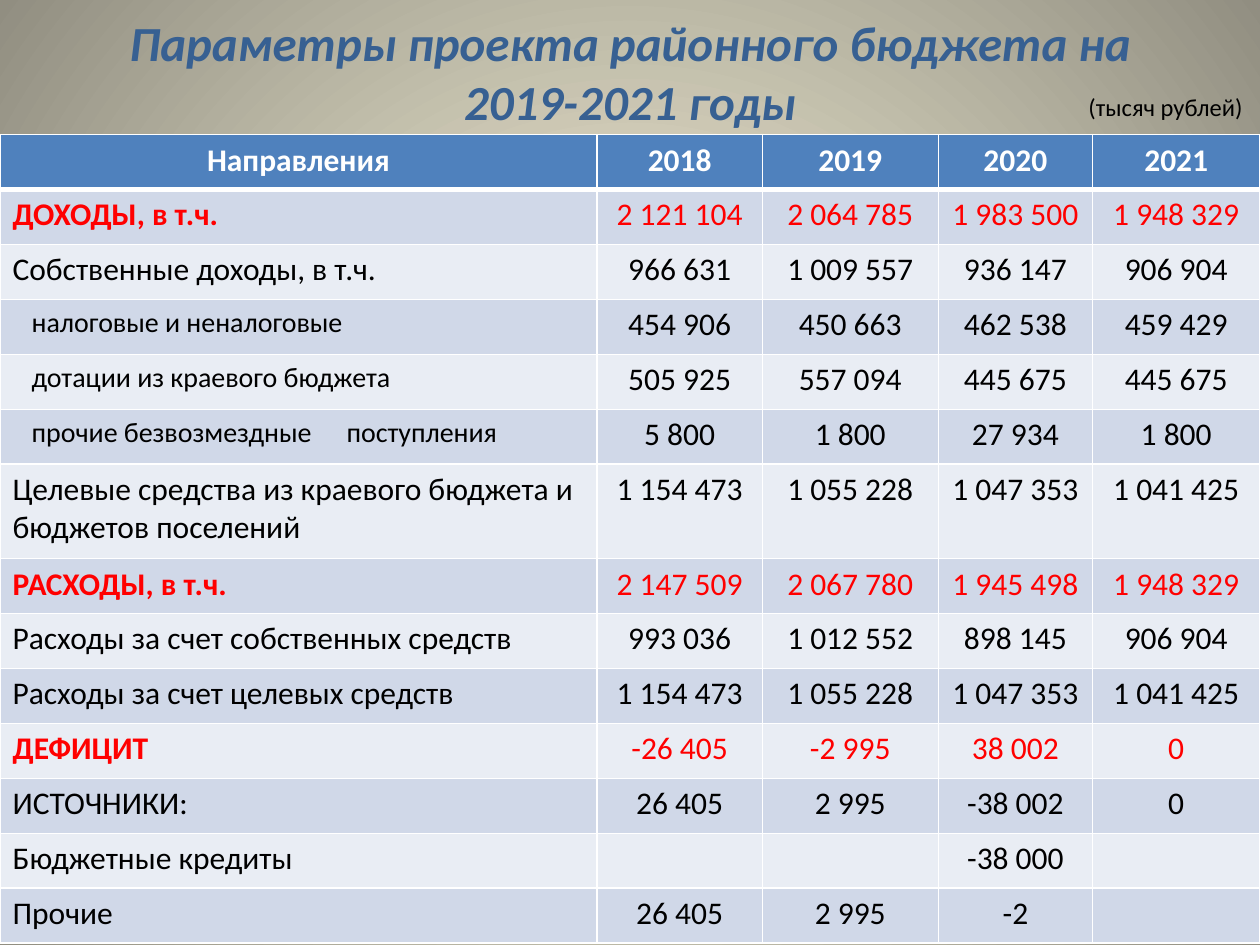
from lxml.etree import SubElement
from pptx import Presentation
from pptx.dml.color import RGBColor as RGB
from pptx.enum.text import MSO_ANCHOR as Anchor, MSO_AUTO_SIZE as Auto, PP_ALIGN as Align
from pptx.oxml.ns import qn
from pptx.util import Pt

BLUE, RED, BLACK, WHITE = "4F81BD", "FF0000", "000000", "FFFFFF"
BANDS = "D0D8E8", "E9EDF4"
COLS = 341.2, 94.4, 100.6, 88.2, 95.6
ROW, TALL = 31.4, 54
HEAD = "Направления", "2018", "2019", "2020", "2021"
TOTAL, ITEM, SUB = "total", "item", "sub"
ROWS = [
    (TOTAL, "ДОХОДЫ, в т.ч.", "2 121 104", "2 064 785", "1 983 500", "1 948 329"),
    (ITEM, "Собственные доходы, в т.ч.", "966 631", "1 009 557", "936 147", "906 904"),
    (SUB, "налоговые и неналоговые", "454 906", "450 663", "462 538", "459 429"),
    (SUB, "дотации из краевого бюджета", "505 925", "557 094", "445 675", "445 675"),
    (SUB, "прочие безвозмездные\tпоступления", "5 800", "1 800", "27 934", "1 800"),
    (ITEM, "Целевые средства из краевого бюджета и бюджетов поселений",
     "1 154 473", "1 055 228", "1 047 353", "1 041 425"),
    (TOTAL, "РАСХОДЫ, в т.ч.", "2 147 509", "2 067 780", "1 945 498", "1 948 329"),
    (ITEM, "Расходы за счет собственных средств", "993 036", "1 012 552", "898 145", "906 904"),
    (ITEM, "Расходы за счет целевых средств",
     "1 154 473", "1 055 228", "1 047 353", "1 041 425"),
    (TOTAL, "ДЕФИЦИТ", "-26 405", "-2 995", "38 002", "0"),
    (ITEM, "ИСТОЧНИКИ:", "26 405", "2 995", "-38 002", "0"),
    (ITEM, "Бюджетные кредиты", "", "", "-38 000", ""),
    (ITEM, "Прочие", "26 405", "2 995", "-2", ""),
]
TALL_ROW = 6


def color(code):
    return RGB.from_string(code)


def write(frame, text, size=18, ink=BLACK, bold=False, italic=False, align=Align.LEFT):
    para = frame.paragraphs[0]
    para.alignment = align
    if text:
        run = para.add_run()
        run.text = text
        font = run.font
        font.name, font.size = "Calibri", Pt(size)
        font.bold, font.italic = bold, italic
        font.color.rgb = color(ink)
    return para


def place(shape, left, top, width, height):
    shape.left, shape.top = Pt(left), Pt(top)
    shape.width, shape.height = Pt(width), Pt(height)


def paint(slide):
    """Fill the background with a radial gradient."""
    fill = slide.background.fill
    fill.gradient()
    for stop, pos, code in zip(fill.gradient_stops, (0, 1), ("FCF7DD", "918E81")):
        stop.position = pos
        stop.color.rgb = color(code)
    grad = slide.element.find(".//" + qn("a:gradFill"))
    grad.remove(grad.find(qn("a:lin")))
    ring = SubElement(grad, qn("a:path"), path="circle")
    SubElement(ring, qn("a:fillToRect"), l="50000", t="50000", r="50000", b="50000")


def edge(cell, **widths):
    """Draw white borders; must come before the cell's fill."""
    props = cell._tc.get_or_add_tcPr()
    for side in "LRTB":
        line = SubElement(props, qn("a:ln" + side), w=str(Pt(widths.get(side, 1))))
        fill = SubElement(line, qn("a:solidFill"))
        SubElement(fill, qn("a:srgbClr"), val=WHITE)


def shade(cell, code):
    cell.fill.solid()
    cell.fill.fore_color.rgb = color(code)


def indent(para, left, tab):
    props = para._p.get_or_add_pPr()
    props.set("marL", str(Pt(left)))
    props.set("indent", "0")
    if "\t" in para.text:
        tabs = SubElement(props, qn("a:tabLst"))
        SubElement(tabs, qn("a:tab"), pos=str(Pt(tab)), algn="l")


def add_title(slide):
    title = slide.shapes.title
    place(title, 36.7, 15.1, 646.6, 51.1)
    frame = title.text_frame
    frame.word_wrap, frame.auto_size = True, Auto.NONE
    frame.vertical_anchor = Anchor.MIDDLE
    write(frame, "Параметры проекта районного бюджета на 2019-2021 годы", size=28,
          ink="376092", bold=True, italic=True, align=Align.CENTER)


def add_grid(slide):
    heights = [ROW] * (len(ROWS) + 1)
    heights[TALL_ROW] = TALL
    table = slide.shapes.add_table(len(heights), len(COLS), Pt(0), Pt(77),
                                   Pt(sum(COLS)), Pt(sum(heights))).table
    for col, width in zip(table.columns, COLS):
        col.width = Pt(width)
    for row, height in zip(table.rows, heights):
        row.height = Pt(height)
    for cell, text in zip(table.rows[0].cells, HEAD):
        edge(cell, B=3)
        shade(cell, BLUE)
        write(cell.text_frame, text, ink=WHITE, bold=True, align=Align.CENTER)
    for num, (kind, *texts) in enumerate(ROWS, 1):
        ink = RED if kind == TOTAL else BLACK
        for col, text in enumerate(texts):
            cell = table.cell(num, col)
            edge(cell, T=3 if num == 1 else 1)
            shade(cell, BANDS[(num - 1) % 2])
            if col:
                write(cell.text_frame, text, ink=ink, align=Align.CENTER)
                continue
            para = write(cell.text_frame, text, size=16 if kind == SUB else 18,
                         ink=ink, bold=kind == TOTAL)
            if kind == SUB:
                indent(para, 10.9, 192.6)


def add_unit(slide):
    box = slide.shapes.add_textbox(Pt(614.9), Pt(49), Pt(105.1), Pt(24.5))
    frame = box.text_frame
    frame.word_wrap, frame.auto_size = True, Auto.SHAPE_TO_FIT_TEXT
    write(frame, "(тысяч рублей)", size=14)


def main():
    deck = Presentation()
    deck.slide_width, deck.slide_height = Pt(720), Pt(540)
    slide = deck.slides.add_slide(deck.slide_layouts[5])
    paint(slide)
    add_title(slide)
    add_grid(slide)
    add_unit(slide)
    deck.save("out.pptx")


if __name__ == "__main__":
    main()
